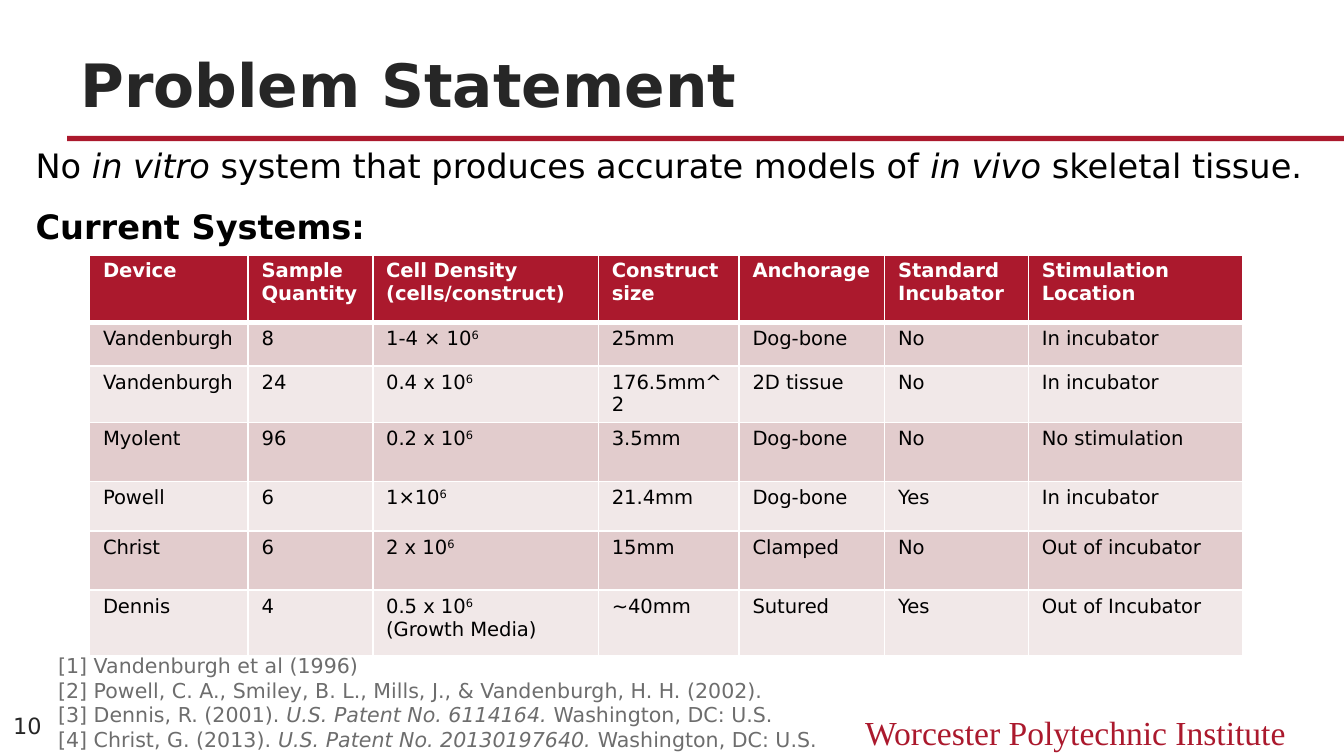
from lxml import etree
from pptx import Presentation
from pptx.dml.color import RGBColor
from pptx.enum import shapes, text
from pptx.oxml import ns
from pptx.util import Pt

COLORS = {"red": "AB192D", "white": "FFFFFF", "black": "000000", "dark": "262626",
          "gray": "6D6D6D", "band": "E2CCCD", "light": "F1E8E8"}
SANS, SERIF = "DejaVu Sans", "Times New Roman"

COLUMNS = [85, 66.7, 120.9, 75.4, 78, 77, 115]
ROWS = [36, 23.5, 24.5, 31.7, 26.6, 31.7, 35.3]
SYSTEMS = [
    ["Device", "Sample Quantity", "Cell Density (cells/construct)", "Construct size",
     "Anchorage", "Standard Incubator", "Stimulation Location"],
    ["Vandenburgh", "8", "1-4 × 10|6", "25mm", "Dog-bone", "No", "In incubator"],
    ["Vandenburgh", "24", "0.4 x 10|6", "176.5mm^2", "2D tissue", "No", "In incubator"],
    ["Myolent", "96", "0.2 x 10|6", "3.5mm", "Dog-bone", "No", "No stimulation"],
    ["Powell", "6", "1×10|6", "21.4mm", "Dog-bone", "Yes", "In incubator"],
    ["Christ", "6", "2 x 10|6", "15mm", "Clamped", "No", "Out of incubator"],
    ["Dennis", "4", "0.5 x 10|6\n(Growth Media)", "~40mm", "Sutured", "Yes",
     "Out of Incubator"],
]
REFERENCES = [
    "[1] Vandenburgh et al (1996)",
    "[2] Powell, C. A., Smiley, B. L., Mills, J., & Vandenburgh, H. H. (2002).",
    "[3] Dennis, R. (2001). |U.S. Patent No. 6114164.| Washington, DC: U.S.",
    "[4] Christ, G. (2013). |U.S. Patent No. 20130197640.| Washington, DC: U.S.",
]


def rgb(name):
    """Return the named colour."""
    return RGBColor.from_string(COLORS[name])


def write(p, line, color, accent="i", **fmt):
    """Write a line whose odd pieces between bars take the accent attribute."""
    for i, piece in enumerate(line.split("|")):
        if not piece:
            continue
        r = p.add_run()
        r.text = piece
        for key, value in {"name": SANS, **fmt}.items():
            setattr(r.font, key, value)
        r.font.color.rgb = rgb(color)
        if i % 2:
            r._r.get_or_add_rPr().set(accent, "1" if accent == "i" else "30000")


def add_text(s, box, lines, color, anchor=text.MSO_ANCHOR.TOP, para=None, **fmt):
    """Place a wrapped text box and return its paragraphs."""
    tf = s.shapes.add_textbox(*map(Pt, box)).text_frame
    tf.word_wrap = True
    tf.vertical_anchor = anchor
    for i, line in enumerate(lines):
        p = tf.add_paragraph() if i else tf.paragraphs[0]
        for key, value in (para or {}).items():
            setattr(p, key, value)
        write(p, line, color, **fmt)
    return tf.paragraphs


def add_header(s, box):
    """Place the title with the red rule below it."""
    x, y, w, h = box
    add_text(s, (x, y, w - 36, h), ["Problem Statement"], "dark",
             text.MSO_ANCHOR.BOTTOM, size=Pt(32), bold=True)
    rule = s.shapes.add_shape(shapes.MSO_SHAPE.RECTANGLE,
                              Pt(x), Pt(y + h + 5.3), Pt(w), Pt(2.9))
    rule.shadow.inherit = False
    rule.fill.solid()
    rule.fill.fore_color.rgb = rgb("red")
    rule.line.fill.background()


def add_statement(s, box):
    """Place the problem statement and the table heading."""
    lines = ["No |in vitro| system that produces accurate models of |in vivo| skeletal tissue.",
             "Current Systems:"]
    statement, heading = add_text(s, box, lines, "black",
                                  para={"line_spacing": 0.95}, size=Pt(18))
    heading.space_before = Pt(12)
    heading.runs[0].font.bold = True


def add_border(cell, side, width):
    """Draw one white cell border."""
    ln = etree.SubElement(cell._tc.get_or_add_tcPr(), ns.qn(f"a:ln{side}"), w=str(Pt(width)))
    fill = etree.SubElement(ln, ns.qn("a:solidFill"))
    etree.SubElement(fill, ns.qn("a:srgbClr"), val=COLORS["white"])


def add_systems(s, box):
    """Place the table of current systems."""
    table = s.shapes.add_table(len(ROWS), len(COLUMNS), *map(Pt, box)).table
    for column, width in zip(table.columns, COLUMNS):
        column.width = Pt(width)
    for i, (row, height) in enumerate(zip(table.rows, ROWS)):
        row.height = Pt(height)
        fill = ("light", "band")[i % 2] if i else "red"
        for cell, value in zip(row.cells, SYSTEMS[i]):
            for side in "LRTB":
                add_border(cell, side, 3 if side + str(i) in ("B0", "T1") else 1)
            cell.fill.solid()
            cell.fill.fore_color.rgb = rgb(fill)
            for key, margin in {"left": 7.2, "right": 7.2, "top": 2.6, "bottom": 2.4}.items():
                setattr(cell, f"margin_{key}", Pt(margin))
            for j, line in enumerate(value.split("\n")):
                p = cell.text_frame.add_paragraph() if j else cell.text_frame.paragraphs[0]
                write(p, line, "black" if i else "white", "baseline",
                      size=Pt(10.5), bold=i == 0)


def add_footer(s, box):
    """Place the page number, references and institute name."""
    x, y, w, h = box
    add_text(s, (x + 432, y + 31.7, 264, 28.8), ["Worcester Polytechnic Institute"], "red",
             para={"alignment": text.PP_ALIGN.RIGHT}, name=SERIF, size=Pt(18))
    add_text(s, (x + 24, y, 492, h), REFERENCES, "gray", size=Pt(11))
    add_text(s, (x, y + 31, 36, 23), ["10"], "dark", text.MSO_ANCHOR.MIDDLE, size=Pt(12))


def main():
    """Build and save the slide."""
    prs = Presentation()
    prs.slide_width, prs.slide_height = Pt(720), Pt(405)
    s = prs.slides.add_slide(prs.slide_layouts[6])
    add_header(s, (36, 20, 684, 47.5))
    add_statement(s, (12, 75.6, 702, 275))
    add_systems(s, (48, 136.6, sum(COLUMNS), sum(ROWS)))
    add_footer(s, (0, 346.4, 720, 48.2))
    prs.save("out.pptx")


if __name__ == "__main__":
    main()
